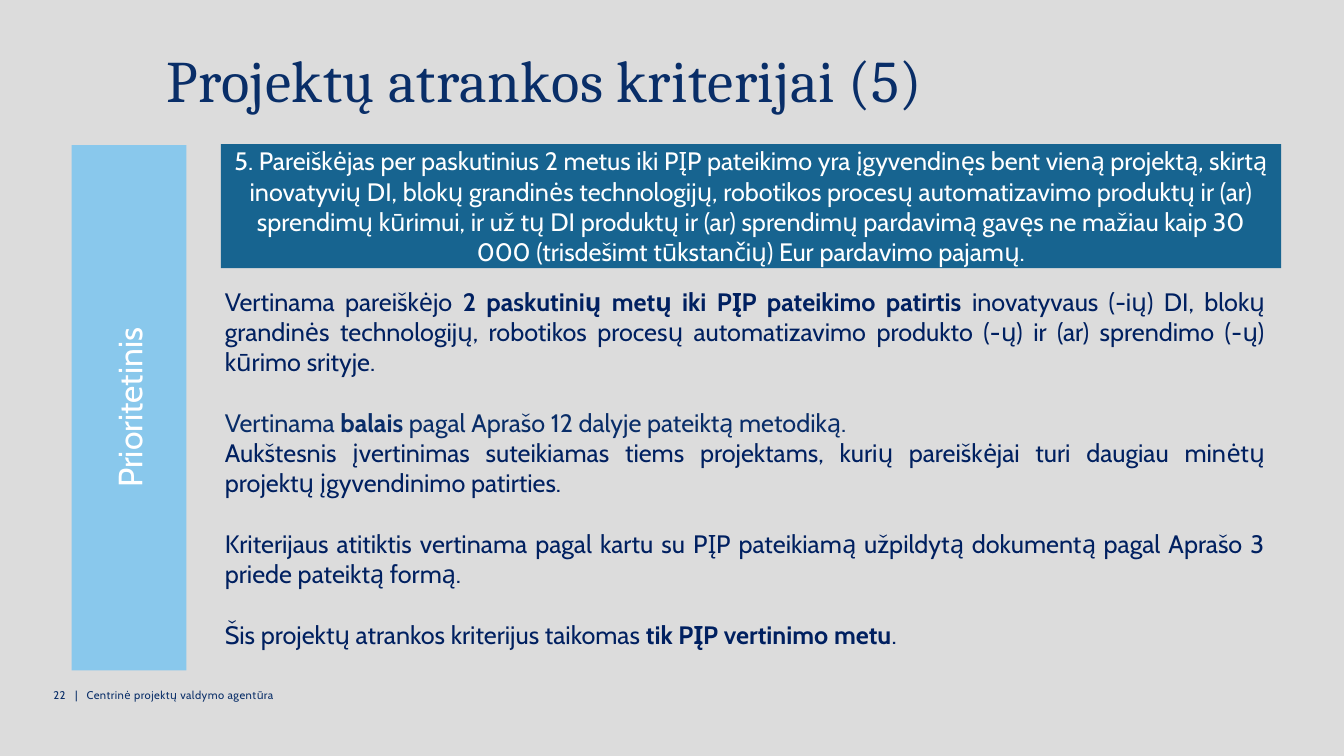
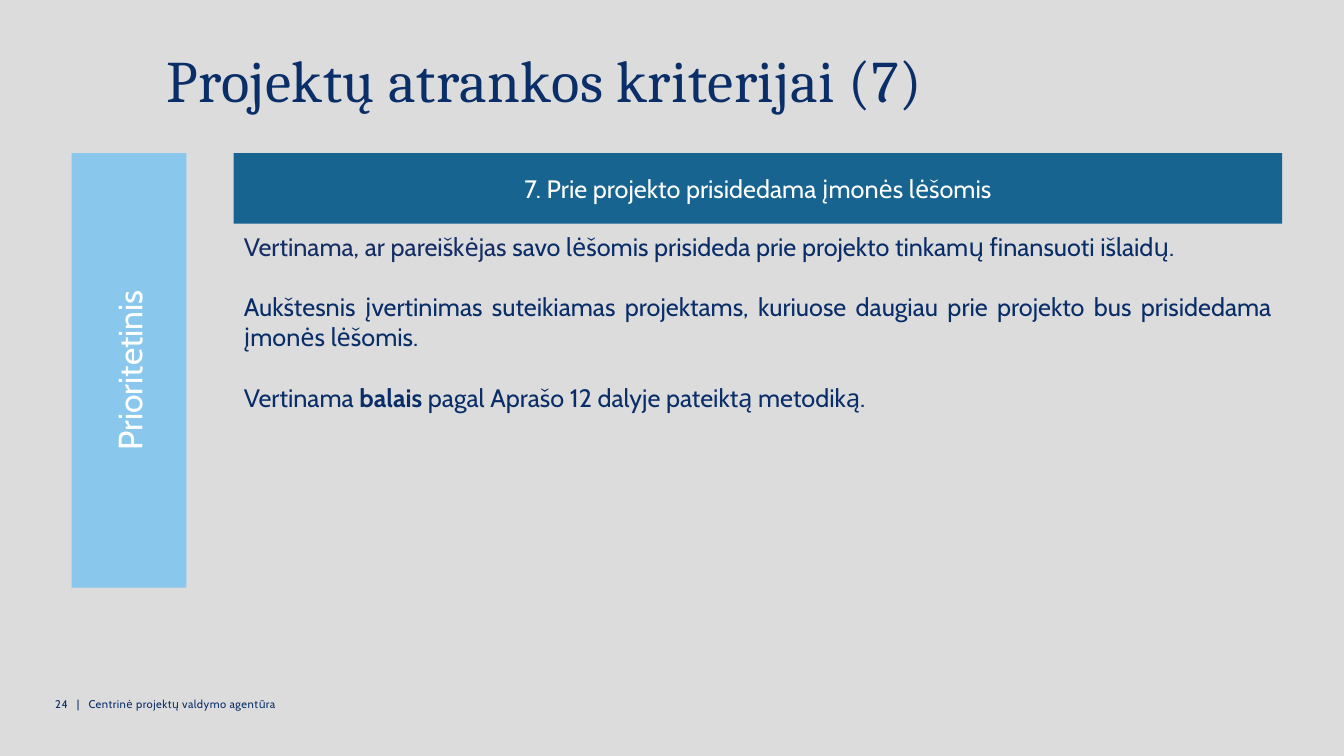
from lxml import etree
from pptx import Presentation
from pptx import util as u
from pptx.dml import color
from pptx.enum import shapes, text
from pptx.oxml import ns

HUES = {
    "page": "DCDCDC",
    "title": "092E68",
    "deep": "002060",
    "navy": "092D68",
    "dusk": "142D64",
    "banner": "176490",
    "side": "89C8EC",
    "white": "FFFFFF",
}
HEAD, SANS = "Cambria", "Cabin"
LINE = 21.6
ALIGN = text.PP_ALIGN


def rgb(hue):
    return color.RGBColor.from_string(HUES[hue])


class Deck:
    """Holds the shared style and the slide being built."""

    def __init__(self):
        self.prs = Presentation()
        self.prs.slide_width = u.Pt(960)
        self.prs.slide_height = u.Pt(540)
        fill = self.prs.slide_master.background.fill
        fill.solid()
        fill.fore_color.rgb = rgb("page")

    def start(self, title):
        self.slide = self.prs.slides.add_slide(self.prs.slide_layouts[1])
        shape = self.slide.shapes.title
        self.place(shape, (111.6, 37.4, 757.4, 46.8))
        frame = shape.text_frame
        frame.text = title
        frame.auto_size = text.MSO_AUTO_SIZE.NONE
        frame.vertical_anchor = text.MSO_ANCHOR.TOP
        para = frame.paragraphs[0]
        para.alignment = ALIGN.LEFT
        para.line_spacing = 0.8
        para.space_after = u.Pt(12)
        self.style(para.runs[0], 42, "title", HEAD, track=40)

    def place(self, shape, box):
        shape.left, shape.top, shape.width, shape.height = map(u.Pt, box)

    def style(self, run, size, hue, face=SANS, bold=None, track=None):
        font = run.font
        font.size = u.Pt(size)
        font.name = face
        font.bold = bold
        font.color.rgb = rgb(hue)
        if track:
            run._r.get_or_add_rPr().set("spc", str(track))

    def panel(self, words, box, hue, size):
        shape = self.slide.shapes.add_shape(
            shapes.MSO_SHAPE.RECTANGLE, *map(u.Pt, box))
        shape.shadow.inherit = False
        shape.fill.solid()
        shape.fill.fore_color.rgb = rgb(hue)
        shape.line.fill.background()
        frame = shape.text_frame
        frame.word_wrap = True
        frame.text = words
        frame.vertical_anchor = text.MSO_ANCHOR.MIDDLE
        para = frame.paragraphs[0]
        para.alignment = ALIGN.CENTER
        self.style(para.runs[0], size, "white")
        return shape

    def banner(self, words, box):
        self.panel(words, box, "banner", 18)

    def side(self, top, height):
        shape = self.panel("Prioritetinis", (51.1, top, 82.1, height), "side", 24)
        shape.element.find(".//" + ns.qn("a:bodyPr")).set("vert", "vert270")

    def body(self, paras, box):
        shape = self.slide.placeholders[1]
        self.place(shape, box)
        frame = shape.text_frame
        frame.auto_size = text.MSO_AUTO_SIZE.NONE
        for num, (gap, parts) in enumerate(paras):
            para = frame.add_paragraph() if num else frame.paragraphs[0]
            props = para._p.get_or_add_pPr()
            props.set("marL", "0")
            props.set("indent", "0")
            etree.SubElement(props, ns.qn("a:buNone"))
            para.alignment = ALIGN.JUSTIFY
            para.space_before = u.Pt(gap)
            for words, hue, bold in parts:
                run = para.add_run()
                run.text = words
                self.style(run, 18, hue, bold=bold)

    def footer(self, num, left, top):
        shape = self.slide.shapes.add_textbox(
            *map(u.Pt, (left, top, 230.4, 28.8)))
        frame = shape.text_frame
        frame.word_wrap = True
        frame.text = f"{num}\t|\tCentrinė projektų valdymo agentūra"
        para = frame.paragraphs[0]
        tabs = etree.SubElement(para._p.get_or_add_pPr(), ns.qn("a:tabLst"))
        for stop in (15.5, 23.8):
            etree.SubElement(tabs, ns.qn("a:tab"), pos=str(u.Pt(stop)), algn="l")
        for run in para.runs:
            self.style(run, 8, "title", track=30)


def main():
    deck = Deck()
    score = [
        ("Vertinama ", "navy", False),
        ("balais", "navy", True),
        (" pagal Aprašo 12 dalyje pateiktą metodiką.", "navy", False),
    ]

    deck.start("Projektų atrankos kriterijai (5)")
    deck.footer(22, 31, 488.2)
    deck.banner(
        "5. Pareiškėjas per paskutinius 2 metus iki PĮP pateikimo yra "
        "įgyvendinęs bent vieną projektą, skirtą inovatyvių DI, blokų "
        "grandinės technologijų, robotikos procesų automatizavimo produktų "
        "ir (ar) sprendimų kūrimui, ir už tų DI produktų ir (ar) sprendimų "
        "pardavimą gavęs ne mažiau kaip 30 000 (trisdešimt tūkstančių) Eur "
        "pardavimo pajamų.",
        (157.7, 103, 757.4, 88.6))
    deck.side(103.7, 375.1)
    deck.body([
        (0, [
            ("Vertinama pareiškėjo ", "deep", False),
            ("2 paskutinių metų iki PĮP pateikimo patirtis ", "deep", True),
            ("inovatyvaus (-ių) DI, blokų grandinės technologijų, robotikos "
             "procesų automatizavimo produkto (-ų) ir (ar) sprendimo (-ų) "
             "kūrimo srityje.", "deep", False),
        ]),
        (LINE, score),
        (0, [
            ("Aukštesnis įvertinimas suteikiamas tiems projektams, kurių "
             "pareiškėjai turi daugiau minėtų projektų įgyvendinimo "
             "patirties.", "deep", False),
        ]),
        (LINE, [
            ("Kriterijaus atitiktis vertinama pagal kartu su PĮP pateikiamą "
             "užpildytą dokumentą pagal Aprašo 3 priede pateiktą formą.",
             "deep", False),
        ]),
        (LINE, [
            ("Šis projektų atrankos kriterijus taikomas ", "deep", False),
            ("tik PĮP vertinimo metu", "deep", True),
            (".", "deep", False),
        ]),
    ], (153.4, 200.9, 757.4, 312.5))

    deck.start("Projektų atrankos kriterijai (7)")
    deck.footer(24, 32.4, 494.6)
    deck.banner("7. Prie projekto prisidedama įmonės lėšomis",
                (167, 109.4, 748.8, 50.4))
    deck.side(109.4, 310.3)
    deck.body([
        (0, [
            ("Vertinama, ar pareiškėjas ", "dusk", False),
            ("savo lėšomis prisideda prie projekto tinkamų finansuoti "
             "išlaidų.", "navy", False),
        ]),
        (LINE, [
            ("Aukštesnis įvertinimas suteikiamas projektams, kuriuose "
             "daugiau prie projekto bus prisidedama įmonės lėšomis.",
             "navy", False),
        ]),
        (LINE, score),
    ], (167, 161.3, 748.8, 179.3))

    deck.prs.save("out.pptx")


if __name__ == "__main__":
    main()
